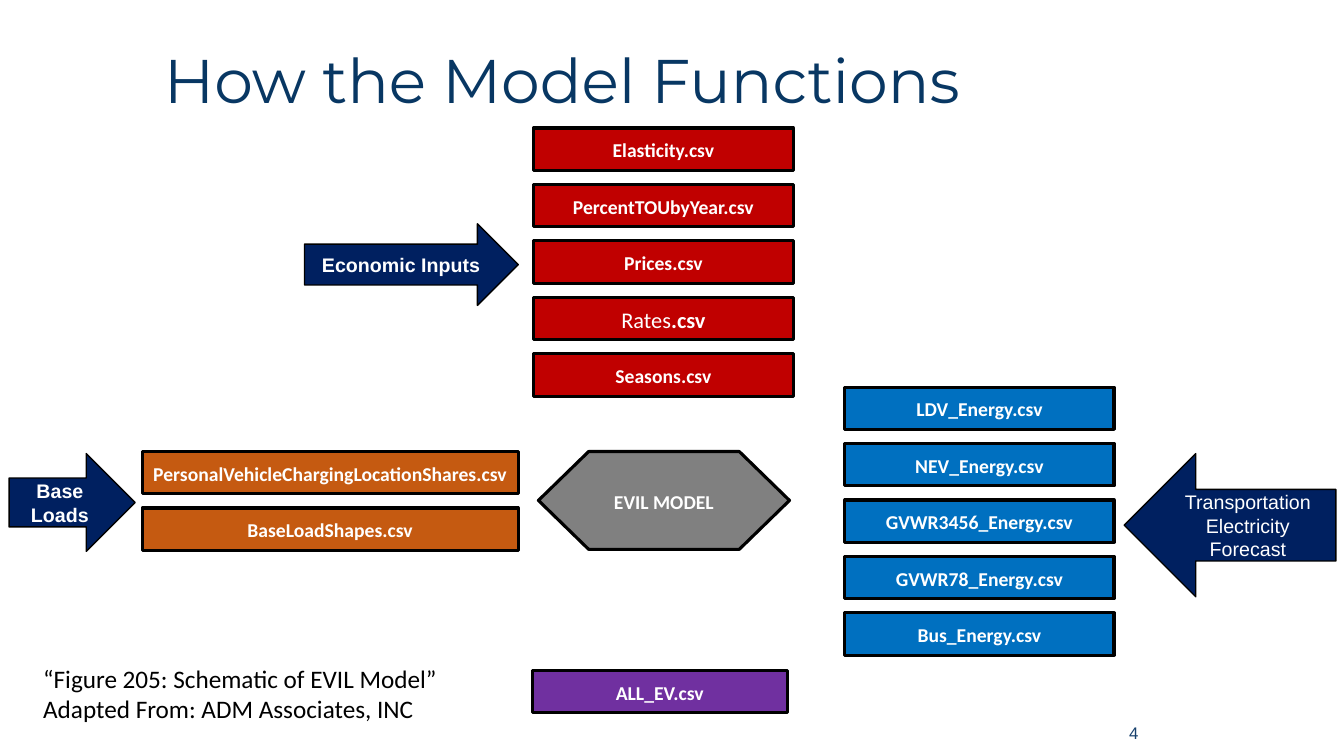
from dataclasses import dataclass

from pptx import Presentation
from pptx import util as u
from pptx.dml.color import RGBColor
from pptx.enum import shapes, text


@dataclass(frozen=True)
class Theme:
    title_ink: str = "083763"
    number_ink: str = "17406D"
    black: str = "000000"
    white: str = "FFFFFF"
    arrow: str = "002060"
    economic: str = "C00000"
    base_load: str = "C55A11"
    energy: str = "0070C0"
    model: str = "808080"
    output: str = "7030A0"
    title_font: str = "Montserrat"
    arrow_font: str = "Arial"
    body_font: str = "Calibri"
    title_size: int = 44
    caption_size: int = 18
    rates_size: int = 16
    label_size: int = 14
    number_size: int = 12


theme = Theme()
Kind = shapes.MSO_SHAPE
Align = text.PP_ALIGN


def write(box, lines, font, size, color, bold=False, align=Align.LEFT,
          anchor=text.MSO_ANCHOR.MIDDLE, wrap=True):
    frame = box.text_frame
    frame.text = "\n".join(lines)
    frame.word_wrap = wrap
    frame.vertical_anchor = anchor
    for para in frame.paragraphs:
        para.alignment = align
        for span in para.runs:
            span.font.name = font
            span.font.size = u.Pt(size)
            span.font.bold = bold
            span.font.color.rgb = RGBColor.from_string(color)


def add_block(kind, place, fill, line_width, lines, font=theme.body_font, bold=True, wrap=True):
    block = page.shapes.add_shape(kind, *map(u.Inches, place))
    block.shadow.inherit = False
    block.fill.solid()
    block.fill.fore_color.rgb = RGBColor.from_string(fill)
    block.line.color.rgb = RGBColor.from_string(theme.black)
    block.line.width = u.Pt(line_width)
    write(block, lines, font, theme.label_size, theme.white, bold, Align.CENTER, wrap=wrap)
    if font == theme.body_font:
        for para in block.text_frame.paragraphs:
            para.line_spacing = 1.07
            para.space_after = u.Pt(8)
    return block


deck = Presentation()
deck.slide_width, deck.slide_height = u.Inches(13.33), u.Inches(7.5)
page = deck.slides.add_slide(deck.slide_layouts[6])

# Title and slide number
title = page.shapes.add_textbox(u.Inches(1.53), u.Inches(0.26), u.Inches(10.89), u.Inches(1.14))
write(title, ["How the Model Functions"], theme.title_font, theme.title_size, theme.title_ink)
title.text_frame.paragraphs[0].line_spacing = 0.9
number = page.shapes.add_textbox(u.Inches(9.42), u.Inches(7.07), u.Inches(1.97), u.Inches(0.4))
write(number, ["4"], theme.arrow_font, theme.number_size, theme.number_ink, align=Align.RIGHT)

# Arrows naming each group of inputs
arrows = [
    (Kind.LEFT_ARROW, (11.15, 4.5, 2.1, 1.42), ["Transportation Electricity", "Forecast"], False),
    (Kind.RIGHT_ARROW, (3.02, 2.22, 2.12, 0.81), ["Economic Inputs"], True),
    (Kind.RIGHT_ARROW, (0.09, 4.5, 1.25, 0.97), ["Base Loads"], True),
]
for kind, place, lines, bold in arrows:
    add_block(kind, place, theme.arrow, 1, lines, theme.arrow_font, bold)

# Stacks of files: left, top, width, fill, names
file_height, file_pitch = 0.42, 0.56
stacks = [
    (1.41, 4.48, 3.73, theme.base_load,
     ["PersonalVehicleChargingLocationShares.csv", "BaseLoadShapes.csv"]),
    (8.38, 3.84, 2.67, theme.energy,
     ["LDV_Energy.csv", "NEV_Energy.csv", "GVWR3456_Energy.csv",
      "GVWR78_Energy.csv", "Bus_Energy.csv"]),
    (5.29, 1.27, 2.58, theme.economic,
     ["Elasticity.csv", "PercentTOUbyYear.csv", "Prices.csv", "Rates.csv", "Seasons.csv"]),
    (5.28, 6.65, 2.53, theme.output, ["ALL_EV.csv"]),
]
unwrapped = {"PersonalVehicleChargingLocationShares.csv", "PercentTOUbyYear.csv"}
files = {}
for left, top, width, fill, names in stacks:
    for row, name in enumerate(names):
        place = (left, top + row * file_pitch, width, file_height)
        files[name] = add_block(Kind.RECTANGLE, place, fill, 2.25, [name],
                                wrap=name not in unwrapped)

# The rates label is larger, with only its extension in bold
rates = files["Rates.csv"].text_frame.paragraphs[0]
rates.runs[0].text = "Rates"
rates.add_run().text = ".csv"
for span, bold in zip(rates.runs, (False, True)):
    span.font.name = theme.body_font
    span.font.size = u.Pt(theme.rates_size)
    span.font.bold = bold
    span.font.color.rgb = RGBColor.from_string(theme.white)

# Model
add_block(Kind.FLOWCHART_PREPARATION, (5.34, 4.48, 2.49, 0.97), theme.model, 2.25, ["EVIL MODEL"])

# Caption
caption = page.shapes.add_textbox(u.Inches(0.33), u.Inches(6.53), u.Inches(4.2), u.Inches(0.71))
write(caption, ["“Figure 205: Schematic of EVIL Model”", "Adapted From: ADM Associates, INC"],
      theme.body_font, theme.caption_size, theme.black, anchor=text.MSO_ANCHOR.TOP)

deck.save("out.pptx")
